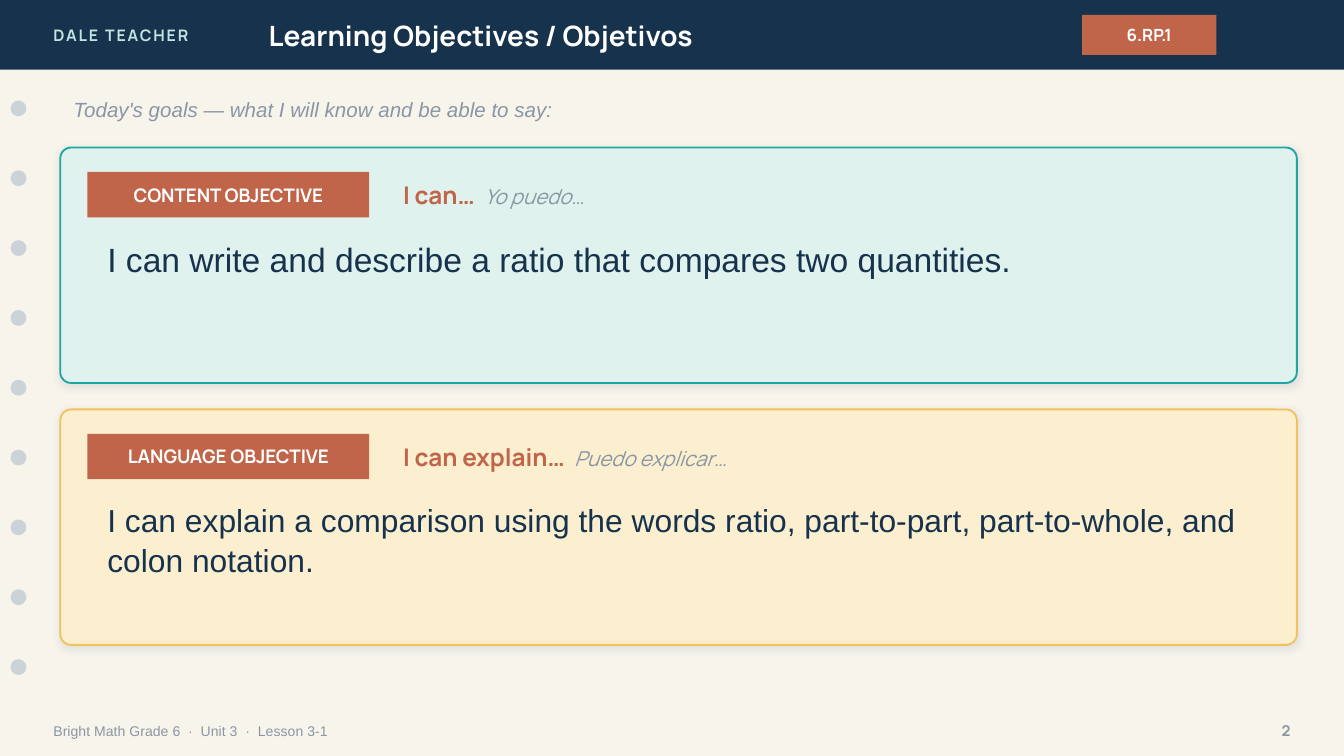
from dataclasses import dataclass

from lxml import etree
from pptx import Presentation
from pptx import util as u
from pptx.dml.color import RGBColor
from pptx.enum import shapes, text
from pptx.oxml import ns

COLORS = {
    "paper": "F7F4EC", "navy": "17324D", "white": "FFFFFF", "mist": "BFE6E2",
    "clay": "C0654A", "dot": "CBD3D9", "grey": "8A96A3", "shadow": "1C2E42",
    "mint": "DFF2EE", "teal": "1FA6A2", "cream": "FBEFD0", "gold": "F2C15B",
}
FORMATS = {
    "brand": {"name": "Manrope", "size": u.Pt(8.5), "bold": True, "color": "mist"},
    "title": {"name": "Manrope", "size": u.Pt(15), "bold": True, "color": "white"},
    "standard": {"name": "Manrope", "size": u.Pt(9), "bold": True, "color": "white"},
    "label": {"name": "Manrope", "size": u.Pt(10), "bold": True, "color": "white"},
    "prompt": {"name": "Manrope", "size": u.Pt(13), "bold": True, "color": "clay"},
    "spanish": {"name": "Manrope", "size": u.Pt(11), "bold": False, "italic": True, "color": "grey"},
    "intro": {"name": "Arial", "size": u.Pt(11), "italic": True, "color": "grey"},
    "footer": {"name": "Arial", "size": u.Pt(7.5), "color": "grey"},
    "page": {"name": "Manrope", "size": u.Pt(8), "bold": True, "color": "grey"},
    "content": {"name": "Arial", "size": u.Pt(18), "color": "navy"},
    "language": {"name": "Arial", "size": u.Pt(17), "color": "navy"},
}
HEADER_H = 1.32
CARD_LEFT, CARD_TOP, CARD_W, CARD_H, CARD_PITCH = 1.14, 2.79, 23.37, 4.45, 4.95
DOT_COUNT, DOT_TOP, DOT_PITCH, DOT_SIZE = 9, 1.9, 1.32, 0.3


@dataclass
class Box:
    left: float
    top: float
    width: float
    height: float

    def lengths(self) -> list:
        return [u.Cm(v) for v in (self.left, self.top, self.width, self.height)]


@dataclass
class Objective:
    label: str
    prompt: str
    spanish: str
    goal: str
    goal_format: str
    fill: str
    line: str


OBJECTIVES = [
    Objective("CONTENT OBJECTIVE", "I can…  ", "Yo puedo…",
              "I can write and describe a ratio that compares two quantities.",
              "content", "mint", "teal"),
    Objective("LANGUAGE OBJECTIVE", "I can explain…  ", "Puedo explicar…",
              "I can explain a comparison using the words ratio, part-to-part, "
              "part-to-whole, and colon notation.",
              "language", "cream", "gold"),
]


def rgb(key: str) -> RGBColor:
    return RGBColor.from_string(COLORS[key])


def write(sp, runs: list, align=text.PP_ALIGN.LEFT, anchor=text.MSO_ANCHOR.MIDDLE):
    tf = sp.text_frame
    tf.word_wrap = True
    tf.vertical_anchor = anchor
    p = tf.paragraphs[0]
    p.alignment = align
    for words, style in runs:
        r = p.add_run()
        r.text = words
        for attr, value in FORMATS[style].items():
            if attr == "color":
                r.font.color.rgb = rgb(value)
            else:
                setattr(r.font, attr, value)
    return p


def add_text(s, box: Box, runs: list, **options):
    return write(s.shapes.add_textbox(*box.lengths()), runs, **options)


def add_block(s, box: Box, fill: str, kind=shapes.MSO_SHAPE.RECTANGLE):
    sp = s.shapes.add_shape(kind, *box.lengths())
    sp.shadow.inherit = False
    sp.fill.solid()
    sp.fill.fore_color.rgb = rgb(fill)
    sp.line.fill.background()
    return sp


def add_tag(s, box: Box, words: str, style: str) -> None:
    write(add_block(s, box, "clay"), [(words, style)], align=text.PP_ALIGN.CENTER)


def add_soft_shadow(sp) -> None:
    effects = sp._element.spPr.find(ns.qn("a:effectLst"))
    outer = etree.SubElement(effects, ns.qn("a:outerShdw"), blurRad=str(u.Pt(4)),
                             dist=str(u.Pt(1)), dir="5400000", algn="bl", rotWithShape="0")
    color = etree.SubElement(outer, ns.qn("a:srgbClr"), val=COLORS["shadow"])
    etree.SubElement(color, ns.qn("a:alpha"), val="10000")


def add_objective(s, top: float, item: Objective) -> None:
    card = add_block(s, Box(CARD_LEFT, top, CARD_W, CARD_H), item.fill,
                     shapes.MSO_SHAPE.ROUNDED_RECTANGLE)
    card.adjustments[0] = 0.046
    card.line.color.rgb = rgb(item.line)
    card.line.width = u.Pt(1)
    add_soft_shadow(card)
    add_tag(s, Box(1.65, top + 0.46, 5.33, 0.86), item.label, "label")
    add_text(s, Box(7.37, top + 0.46, 16.76, 0.86),
             [(item.prompt, "prompt"), (item.spanish, "spanish")])
    p = add_text(s, Box(1.78, top + 1.57, 22.1, 2.54), [(item.goal, item.goal_format)],
                 anchor=text.MSO_ANCHOR.TOP)
    p.line_spacing = 1.05


def main() -> None:
    prs = Presentation()
    prs.slide_width, prs.slide_height = u.Cm(25.4), u.Cm(14.29)
    s = prs.slides.add_slide(prs.slide_layouts[6])
    s.background.fill.solid()
    s.background.fill.fore_color.rgb = rgb("paper")

    add_block(s, Box(0, 0, 25.4, HEADER_H), "navy")
    p = add_text(s, Box(0.76, 0, 6.1, HEADER_H), [("DALE TEACHER", "brand")])
    p.runs[0].font._element.set("spc", "100")
    add_text(s, Box(4.83, 0, 14.22, HEADER_H), [("Learning Objectives / Objetivos", "title")])
    add_tag(s, Box(20.45, 0.28, 2.54, 0.76), "6.RP.1", "standard")

    for i in range(DOT_COUNT):
        add_block(s, Box(0.2, DOT_TOP + i * DOT_PITCH, DOT_SIZE, DOT_SIZE), "dot",
                  shapes.MSO_SHAPE.OVAL)

    add_text(s, Box(0.76, 13.46, 17.78, 0.71),
             [("Bright Math Grade 6  ·  Unit 3  ·  Lesson 3-1", "footer")])
    add_text(s, Box(23.37, 13.46, 1.27, 0.71), [("2", "page")], align=text.PP_ALIGN.RIGHT)
    add_text(s, Box(CARD_LEFT, 1.68, CARD_W, 0.76),
             [("Today's goals — what I will know and be able to say:", "intro")])

    for i, item in enumerate(OBJECTIVES):
        add_objective(s, CARD_TOP + i * CARD_PITCH, item)

    prs.save("out.pptx")


if __name__ == "__main__":
    main()
